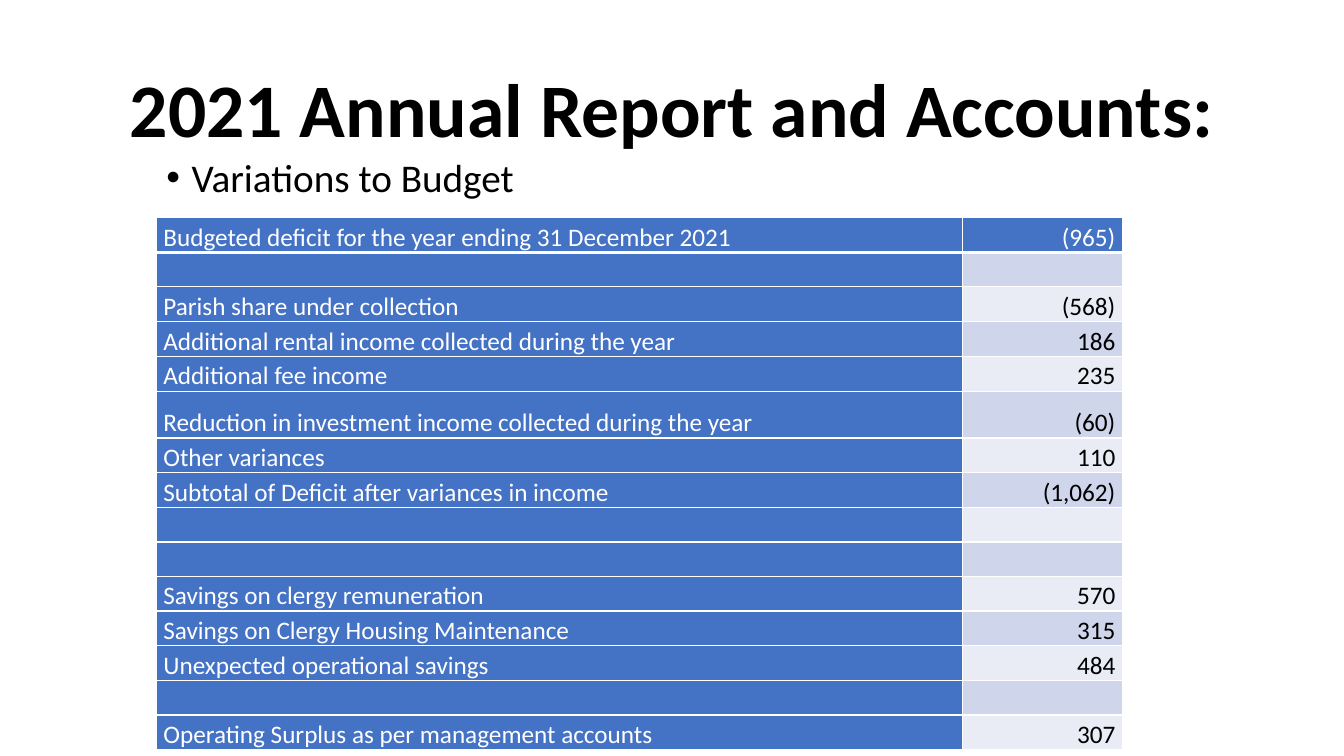
import pptx
import pptx.dml.color
import pptx.enum.text
import pptx.oxml
import pptx.oxml.ns
import pptx.util

Pt = pptx.util.Pt
ALIGN = pptx.enum.text.PP_ALIGN
ANCHOR = pptx.enum.text.MSO_ANCHOR

FONT = "Calibri"
COLORS = {
    "text": "000000",
    "white": "FFFFFF",
    "label": "4472C4",
    "dark_band": "CFD5EA",
    "light_band": "E9EBF5",
}
BLANK = ("", "")
VARIATIONS = [
    ("Budgeted deficit for the year ending 31 December 2021", "(965)"),
    BLANK,
    ("Parish share under collection", "(568)"),
    ("Additional rental income collected during the year", "186"),
    ("Additional fee income", "235"),
    ("Reduction in investment income collected during the year", "(60)"),
    ("Other variances", "110"),
    ("Subtotal of Deficit after variances in income", "(1,062)"),
    BLANK,
    BLANK,
    ("Savings on clergy remuneration", "570"),
    ("Savings on Clergy Housing Maintenance", "315"),
    ("Unexpected operational savings", "484"),
    BLANK,
    ("Operating Surplus as per management accounts", "307"),
]
COLUMN_WIDTHS = (575.5, 114.5)
ROW_HEIGHT = 24.5
TALL_ROW, TALL_HEIGHT = 5, 33.5


def rgb(name):
    return pptx.dml.color.RGBColor.from_string(COLORS[name])


def style_runs(para, size, color, bold=False):
    for span in para.runs:
        span.font.name = FONT
        span.font.size = Pt(size)
        span.font.bold = bold
        span.font.color.rgb = rgb(color)


def add_text(page, text, left, top, width, height, anchor):
    """Add a wrapping text box and return its paragraph."""
    box = page.shapes.add_textbox(Pt(left), Pt(top), Pt(width), Pt(height))
    frame = box.text_frame
    frame.word_wrap = True
    frame.vertical_anchor = anchor
    frame.text = text
    para = frame.paragraphs[0]
    para.line_spacing = 0.9
    return para


def add_bullet(para, indent):
    properties = para._p.get_or_add_pPr()
    properties.set("marL", str(Pt(indent)))
    properties.set("indent", str(-Pt(indent)))
    namespace = pptx.oxml.ns.nsdecls("a")
    properties.append(pptx.oxml.parse_xml(f'<a:buFont {namespace} typeface="Arial"/>'))
    properties.append(pptx.oxml.parse_xml(f'<a:buChar {namespace} char="•"/>'))


def add_borders(cell, bottom):
    namespace = pptx.oxml.ns.nsdecls("a")
    for side, width in (("L", 1), ("R", 1), ("T", 1), ("B", bottom)):
        cell._tc.get_or_add_tcPr().append(pptx.oxml.parse_xml(
            f'<a:ln{side} {namespace} w="{Pt(width)}"><a:solidFill>'
            f'<a:srgbClr val="{COLORS["white"]}"/></a:solidFill></a:ln{side}>'))


def fill_cell(cell, text, fill, color, align, bottom):
    add_borders(cell, bottom)
    cell.fill.solid()
    cell.fill.fore_color.rgb = rgb(fill)
    cell.margin_left = cell.margin_right = Pt(5)
    cell.margin_top = cell.margin_bottom = 0
    cell.vertical_anchor = ANCHOR.BOTTOM
    if text:
        cell.text_frame.text = text
        para = cell.text_frame.paragraphs[0]
        para.alignment = align
        para.line_spacing = 1.15
        style_runs(para, 18, color)


def add_variations_table(page, left, top):
    height = ROW_HEIGHT * (len(VARIATIONS) - 1) + TALL_HEIGHT
    table = page.shapes.add_table(
        len(VARIATIONS), len(COLUMN_WIDTHS),
        Pt(left), Pt(top), Pt(sum(COLUMN_WIDTHS)), Pt(height)).table
    for column, width in zip(table.columns, COLUMN_WIDTHS):
        column.width = Pt(width)
    for index, (label, amount) in enumerate(VARIATIONS):
        table.rows[index].height = Pt(TALL_HEIGHT if index == TALL_ROW else ROW_HEIGHT)
        if index == 0:
            fill, color, bottom = "label", "white", 3
        else:
            fill = "dark_band" if index % 2 else "light_band"
            color, bottom = "text", 1
        fill_cell(table.cell(index, 0), label, "label", "white", ALIGN.LEFT, bottom)
        fill_cell(table.cell(index, 1), amount, fill, color, ALIGN.RIGHT, bottom)


def main():
    deck = pptx.Presentation()
    deck.slide_width, deck.slide_height = Pt(960), Pt(540)
    page = deck.slides.add_slide(deck.slide_layouts[6])

    title = add_text(page, "2021 Annual Report and Accounts:",
                     66, 28.75, 828, 104.4, ANCHOR.MIDDLE)
    title.alignment = ALIGN.CENTER
    style_runs(title, 54, "text", bold=True)

    subtitle = add_text(page, "Variations to Budget",
                        111.75, 109.5, 782, 376.5, ANCHOR.TOP)
    add_bullet(subtitle, 18)
    style_runs(subtitle, 28, "text")

    add_variations_table(page, 111.75, 155.5)
    deck.save("out.pptx")


if __name__ == "__main__":
    main()
